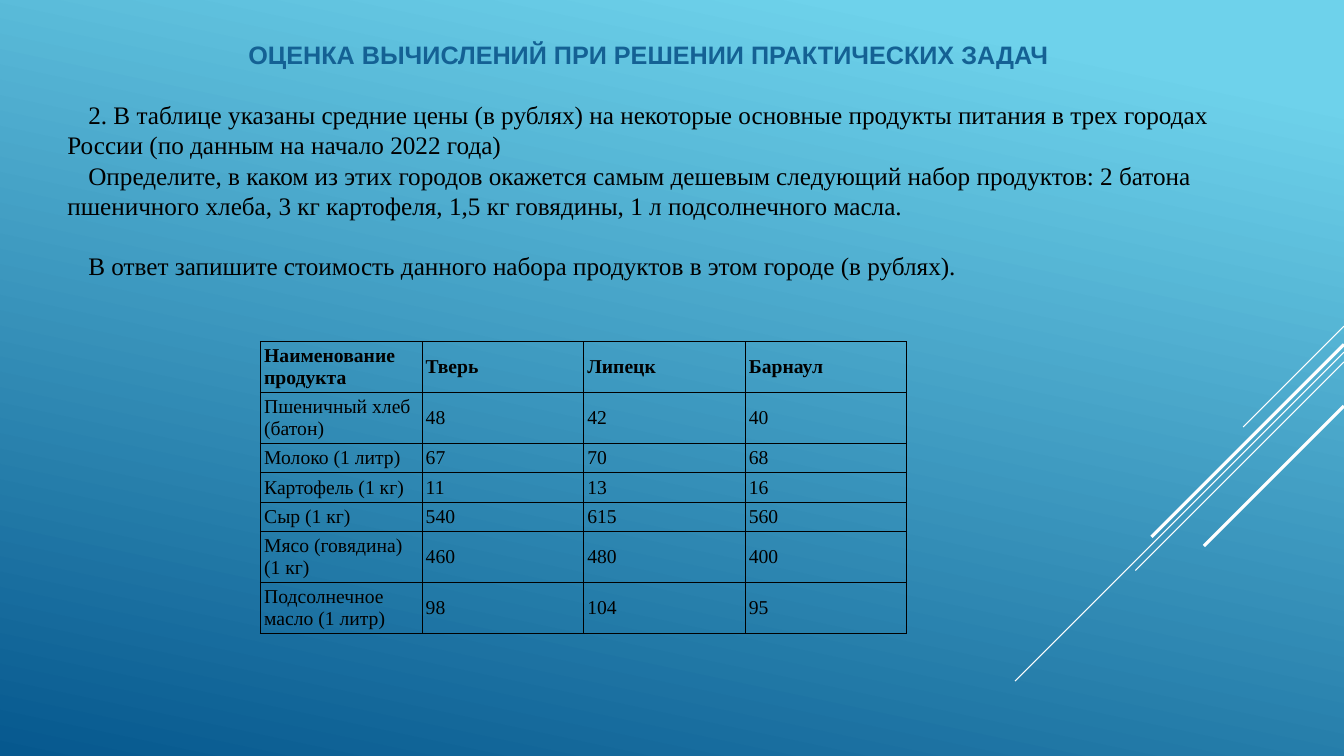
import pptx
import pptx.util
import pptx.dml.color
import pptx.enum.shapes
import pptx.enum.text
import pptx.oxml
import pptx.oxml.ns
import lxml.etree
import dataclasses

Pt = pptx.util.Pt
ALIGN = pptx.enum.text.PP_ALIGN
ANCHOR = pptx.enum.text.MSO_ANCHOR


def rgb(value):
    return pptx.dml.color.RGBColor.from_string(value)


@dataclasses.dataclass(frozen=True)
class Theme:
    sky: str = "6ED2EB"
    deep: str = "06588E"
    heading: str = "146194"
    ink: str = "000000"
    ray: str = "FFFFFF"
    heading_font: str = "Arial"
    body_font: str = "Times New Roman"
    text_size: int = 18
    table_size: int = 14
    indent: int = 15
    line_pitch: float = 21.6
    border: float = 0.75


class SlideBuilder:
    """Adds styled elements to one slide, with lengths in points."""

    def __init__(self, presentation, theme):
        self.theme = theme
        self.slide = presentation.slides.add_slide(presentation.slide_layouts[5])

    def apply(self, target, values):
        for name, value in values.items():
            setattr(target, name, value)

    def place(self, shape, left, top, width, height):
        self.apply(shape, {"left": Pt(left), "top": Pt(top), "width": Pt(width), "height": Pt(height)})

    def frame(self, text_frame, anchor):
        self.apply(text_frame, {
            "word_wrap": True, "auto_size": pptx.enum.text.MSO_AUTO_SIZE.NONE,
            "vertical_anchor": anchor, "margin_top": 0, "margin_bottom": 0,
            "margin_left": Pt(7.2), "margin_right": Pt(7.2)})

    def add_text(self, paragraph, text, font, size, color, bold=False, indent=0, **layout):
        run = paragraph.add_run()
        run.text = text
        self.apply(run.font, {"name": font, "size": Pt(size), "bold": bold})
        run.font.color.rgb = rgb(color)
        self.apply(paragraph, layout)
        if indent:
            properties = paragraph._p.get_or_add_pPr()
            properties.set("marL", "0")
            properties.set("indent", str(Pt(indent)))

    def background(self, angle):
        fill = self.slide.background.fill
        fill.gradient()
        fill.gradient_angle = angle
        stops = ((0.1, self.theme.sky), (1.0, self.theme.deep))
        for stop, (position, color) in zip(fill.gradient_stops, stops):
            stop.position = position
            stop.color.rgb = rgb(color)

    def ray(self, right, top, run, weight):
        line = self.slide.shapes.add_connector(
            pptx.enum.shapes.MSO_CONNECTOR.STRAIGHT,
            Pt(right), Pt(top), Pt(right - run), Pt(top + run))
        line.line.width = Pt(weight)
        line.line.color.rgb = rgb(self.theme.ray)
        lxml.etree.SubElement(line._element.spPr, pptx.oxml.ns.qn("a:effectLst"))

    def title(self, text, *box):
        theme = self.theme
        shape = self.slide.shapes.title
        self.place(shape, *box)
        self.frame(shape.text_frame, ANCHOR.MIDDLE)
        self.add_text(shape.text_frame.paragraphs[0], text, theme.heading_font, theme.text_size,
                      theme.heading, True, theme.indent, alignment=ALIGN.CENTER)

    def body(self, entries, *box):
        theme = self.theme
        text_frame = self.slide.shapes.add_textbox(*map(Pt, box)).text_frame
        self.frame(text_frame, ANCHOR.TOP)
        for index, (text, gap) in enumerate(entries):
            paragraph = text_frame.add_paragraph() if index else text_frame.paragraphs[0]
            self.add_text(paragraph, text, theme.body_font, theme.text_size, theme.ink,
                          indent=theme.indent, alignment=ALIGN.LEFT,
                          line_spacing=Pt(theme.line_pitch), space_before=Pt(gap))

    def borders(self, cell):
        properties = cell._tc.get_or_add_tcPr()
        for index, side in enumerate(("lnL", "lnR", "lnT", "lnB")):
            properties.insert(index, pptx.oxml.parse_xml(
                f'<a:{side} {pptx.oxml.ns.nsdecls("a")} w="{Pt(self.theme.border)}"><a:solidFill>'
                f'<a:srgbClr val="{self.theme.ink}"/></a:solidFill></a:{side}>'))

    def table(self, rows, left, top, column_width, row_height, inset):
        theme = self.theme
        columns = len(rows[0])
        table = self.slide.shapes.add_table(
            len(rows), columns, Pt(left), Pt(top),
            Pt(column_width * columns), Pt(row_height * len(rows))).table
        self.apply(table, {"first_row": False, "horz_banding": False})
        for row_index, row in enumerate(rows):
            for column_index, value in enumerate(row):
                cell = table.cell(row_index, column_index)
                self.apply(cell, {
                    "vertical_anchor": ANCHOR.MIDDLE, "margin_left": Pt(inset),
                    "margin_right": Pt(inset), "margin_top": Pt(inset), "margin_bottom": Pt(inset)})
                cell.fill.background()
                self.borders(cell)
                self.add_text(cell.text_frame.paragraphs[0], str(value), theme.body_font,
                              theme.table_size, theme.ink, row_index == 0)


RAYS = ((233, 72, 0.75), (251.5, 235, 0.75), (258.5, 149, 0.75), (246, 137.5, 2.25), (290, 100, 2.25))

PRICES = (
    ("Наименование продукта", "Тверь", "Липецк", "Барнаул"),
    ("Пшеничный хлеб (батон)", 48, 42, 40),
    ("Молоко (1 литр)", 67, 70, 68),
    ("Картофель (1 кг)", 11, 13, 16),
    ("Сыр (1 кг)", 540, 615, 560),
    ("Мясо (говядина) (1 кг)", 460, 480, 400),
    ("Подсолнечное масло (1 литр)", 98, 104, 95),
)


def main():
    theme = Theme()
    presentation = pptx.Presentation()
    presentation.slide_width, presentation.slide_height = Pt(960), Pt(540)
    builder = SlideBuilder(presentation, theme)
    builder.background(258)
    for top, run, weight in RAYS:
        builder.ray(960, top, run, weight)
    builder.table(PRICES, 186, 244, 115.4, 21, 2.7)
    builder.title("ОЦЕНКА ВЫЧИСЛЕНИЙ ПРИ РЕШЕНИИ ПРАКТИЧЕСКИХ ЗАДАЧ", 41, 26, 829.5, 26)
    builder.body((
        ("2. В таблице указаны средние цены (в рублях) на некоторые основные продукты питания "
         "в трех городах России (по данным на начало 2022 года)", 0),
        ("Определите, в каком из этих городов окажется самым дешевым следующий набор продуктов: "
         "2 батона пшеничного хлеба, 3 кг картофеля, 1,5 кг говядины, 1 л подсолнечного масла.", 0),
        ("В ответ запишите стоимость данного набора продуктов в этом городе (в рублях).",
         theme.line_pitch),
    ), 41, 71, 829.5, 130)
    presentation.save("out.pptx")


if __name__ == "__main__":
    main()
